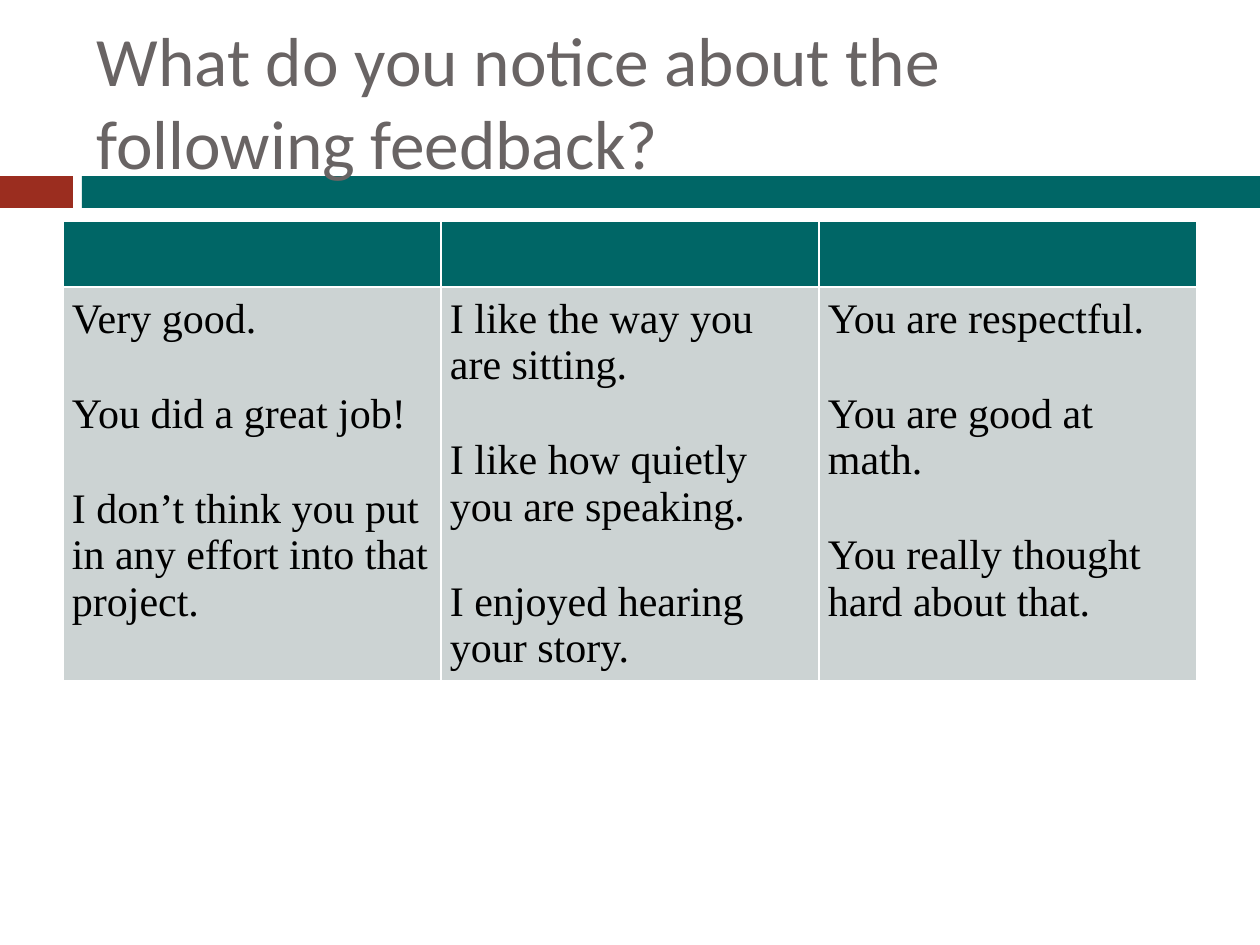
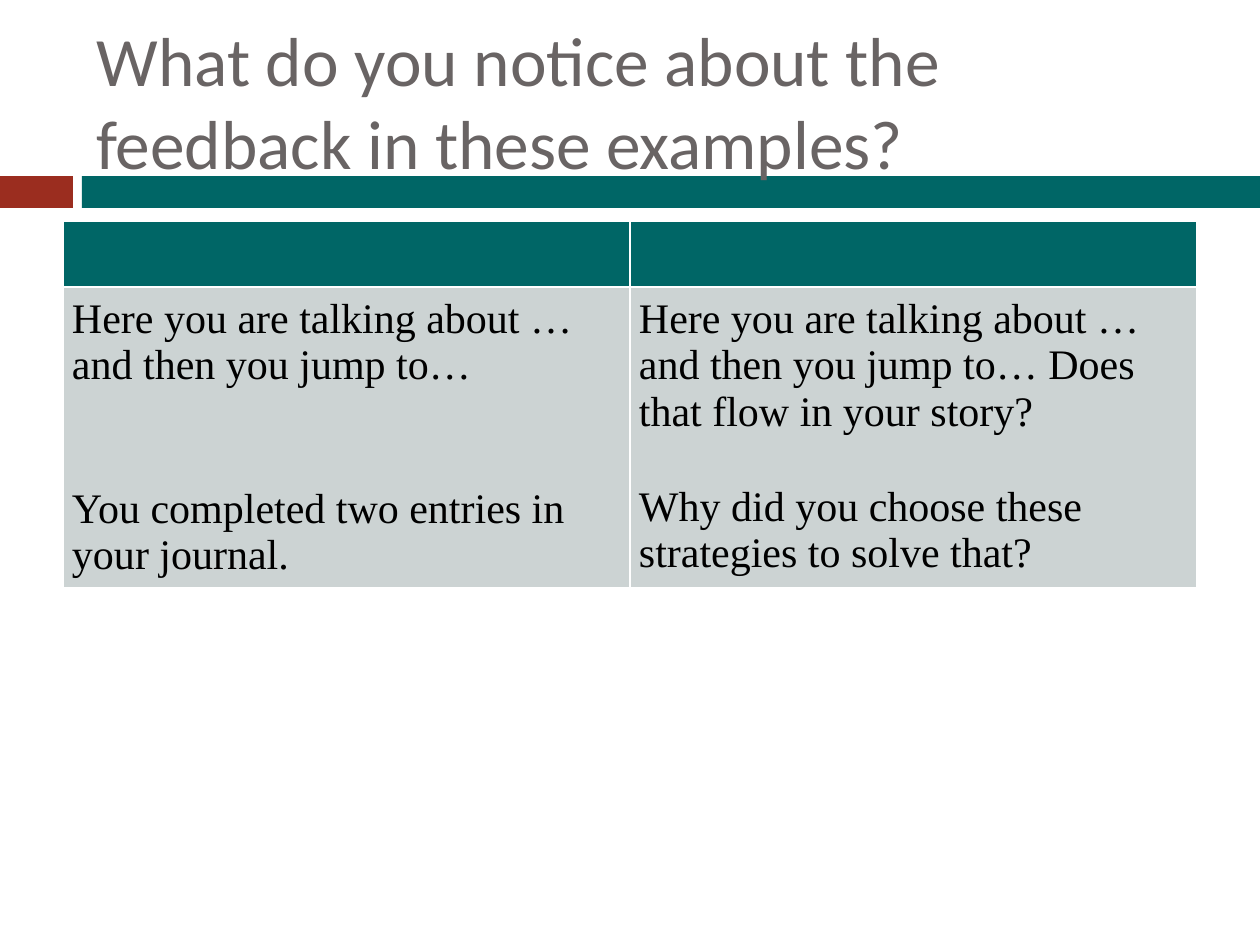
import pptx
import pptx.util
import pptx.dml.color
import pptx.enum.shapes
import pptx.enum.text
import pptx.oxml

PX = 914400 // 126
TEAL, RED, GREY = "006666", "9B2D1F", "696464"
PALE, WHITE, BLACK = "CCD3D3", "FFFFFF", "000000"
BLANK_LINE = 27.7
NS = "http://schemas.openxmlformats.org/drawingml/2006/main"


def rgb(value):
    return pptx.dml.color.RGBColor.from_string(value)


def style_cell(cell, color):
    tcPr = cell._tc.get_or_add_tcPr()
    for side in ("lnL", "lnR", "lnT", "lnB"):
        tcPr.append(pptx.oxml.parse_xml(
            f'<a:{side} xmlns:a="{NS}" w="12700"><a:solidFill>'
            f'<a:srgbClr val="{WHITE}"/></a:solidFill></a:{side}>'))
    cell.fill.solid()
    cell.fill.fore_color.rgb = rgb(color)
    cell.margin_left = cell.margin_right = 9 * PX
    cell.margin_top = cell.margin_bottom = 9 * PX


bands = [(0, 73, RED), (82, 1178, TEAL)]
slides = [
    ("What do you notice about the following feedback?", 393, 1, [
        ["Very good.",
         "You did a great job!",
         "I don’t think you put in any effort into that project."],
        ["I like the way you are sitting.",
         "I like how quietly you are speaking.",
         "I enjoyed hearing your story."],
        ["You are respectful.",
         "You are good at math.",
         "You really thought hard about that."],
    ]),
    ("What do you notice about the feedback in these examples?", 298, 2, [
        ["Here you are talking about …and then you jump to…",
         "You completed two entries in your journal."],
        ["Here you are talking about …and then you jump to… "
         "Does that flow in your story?",
         "Why did you choose these strategies to solve that?"],
    ]),
]

prs = pptx.Presentation()
prs.slide_width = 1260 * PX
prs.slide_height = 945 * PX

for heading, body_height, first_gap, columns in slides:
    s = prs.slides.add_slide(prs.slide_layouts[5])

    title = s.shapes.title
    title.left, title.top = 84 * PX, 32 * PX
    title.width, title.height = 1124 * PX, 136 * PX
    tf = title.text_frame
    tf.text = heading
    tf.word_wrap = True
    tf.auto_size = pptx.enum.text.MSO_AUTO_SIZE.NONE
    tf.vertical_anchor = pptx.enum.text.MSO_ANCHOR.MIDDLE
    p = tf.paragraphs[0]
    p.alignment = pptx.enum.text.PP_ALIGN.LEFT
    p.font.name = "Calibri"
    p.font.size = pptx.util.Pt(39.6)
    p.font.color.rgb = rgb(GREY)

    for left, width, color in bands:
        sp = s.shapes.add_shape(pptx.enum.shapes.MSO_SHAPE.RECTANGLE,
                                left * PX, 176 * PX, width * PX, 32 * PX)
        sp.shadow.inherit = False
        sp.fill.solid()
        sp.fill.fore_color.rgb = rgb(color)
        sp.line.fill.background()
        title._element.addprevious(sp._element)

    table = s.shapes.add_table(2, len(columns), 63 * PX, 221 * PX, 1134 * PX,
                               (66 + body_height) * PX).table
    table.rows[0].height = 66 * PX
    table.rows[1].height = body_height * PX
    for col, texts in enumerate(columns):
        style_cell(table.cell(0, col), TEAL)
        body = table.cell(1, col)
        style_cell(body, PALE)
        tf = body.text_frame
        tf.text = "\n".join(texts)
        for i, p in enumerate(tf.paragraphs):
            p.font.name = "Times New Roman"
            p.font.size = pptx.util.Pt(24)
            p.font.color.rgb = rgb(BLACK)
            if i:
                gap = first_gap if col == 0 else 1
                p.space_before = pptx.util.Pt(gap * BLANK_LINE)

prs.save("out.pptx")
